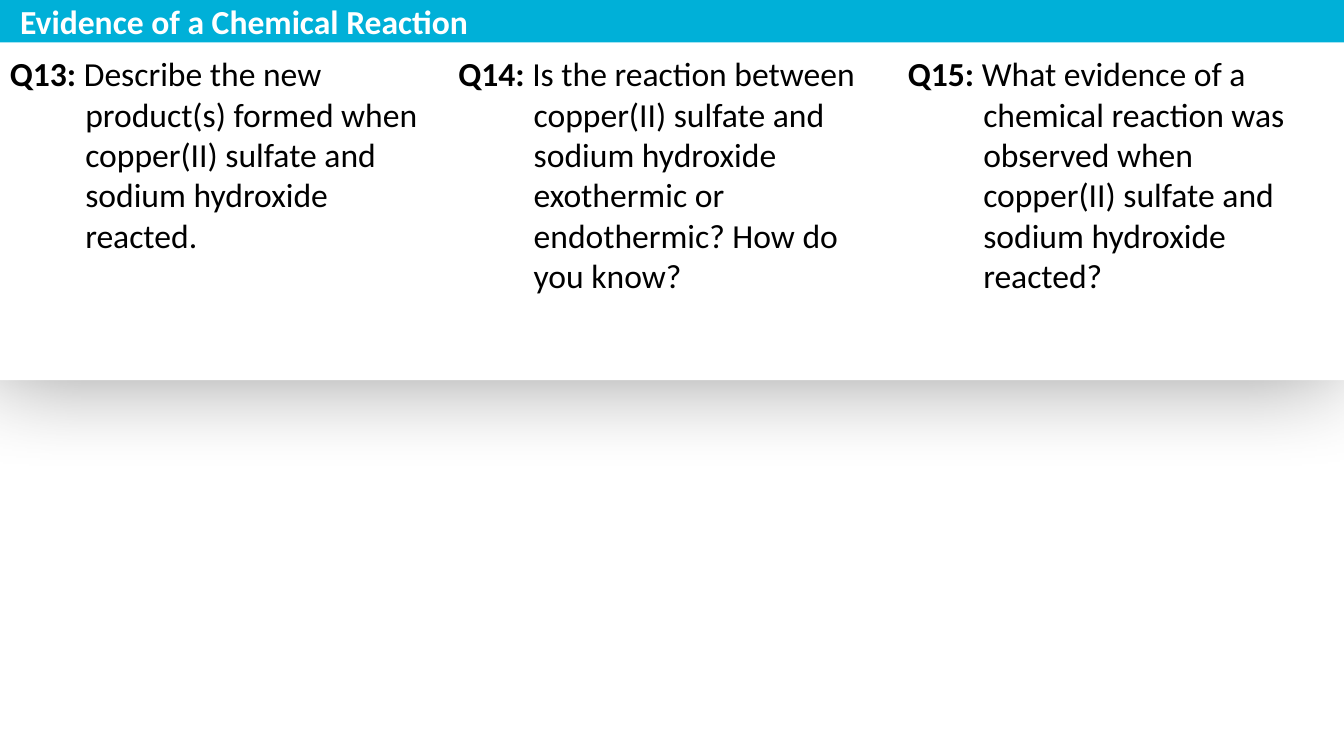
"""Build the slide of questions on evidence of a chemical reaction."""
from lxml.etree import SubElement
from pptx import Presentation
from pptx.dml.color import RGBColor
from pptx.enum.shapes import MSO_SHAPE
from pptx.enum.text import MSO_ANCHOR, MSO_AUTO_SIZE
from pptx.oxml.ns import qn
from pptx.util import Cm, Pt

TITLE = "Evidence of a Chemical Reaction"
QUESTIONS = [
    ("Q13:", " Describe the new product(s) formed when copper(II) sulfate "
             "and sodium hydroxide reacted.", 0, 11.3, 5.38),
    ("Q14:", " Is the reaction between copper(II) sulfate and sodium hydroxide "
             "exothermic or endothermic? How do you know?", 11.3, 11.35, 6.4),
    ("Q15:", " What evidence of a chemical reaction was observed when "
             "copper(II) sulfate and sodium hydroxide reacted?", 22.63, 11.2, 6.4),
]

WHITE = RGBColor(0xFF, 0xFF, 0xFF)
BLACK = RGBColor(0x00, 0x00, 0x00)
CYAN = RGBColor(0x00, 0xB0, 0xD8)

PAGE_WIDTH, PAGE_HEIGHT = Cm(33.87), Cm(18.75)
BANNER_HEIGHT = Cm(1.07)
PANEL_TOP, PANEL_HEIGHT = Cm(0.69), Cm(8.89)
QUESTION_TOP = Cm(1.22)
HANGING = Cm(1.9)


def add_band(page, top, height, color):
    band = page.shapes.add_shape(MSO_SHAPE.RECTANGLE, 0, top, PAGE_WIDTH, height)
    band.shadow.inherit = False
    band.fill.solid()
    band.fill.fore_color.rgb = color
    band.line.fill.background()
    return band


def add_soft_shadow(shape):
    effects = shape._element.spPr.find(qn("a:effectLst"))
    shadow = SubElement(effects, qn("a:outerShdw"), blurRad=str(Pt(68)),
                        dist=str(Pt(5)), dir=str(180 * 60000),
                        algn="ctr", rotWithShape="0")
    color = SubElement(shadow, qn("a:srgbClr"), val=str(BLACK))
    SubElement(color, qn("a:alpha"), val="40000")


def add_text(page, left, top, width, height, spans, color):
    box = page.shapes.add_textbox(left, top, width, height)
    frame = box.text_frame
    frame.word_wrap = True
    frame.auto_size = MSO_AUTO_SIZE.SHAPE_TO_FIT_TEXT
    para = frame.paragraphs[0]
    for text, bold in spans:
        span = para.add_run()
        span.text = text
        span.font.name = "Calibri"
        span.font.size = Pt(24)
        span.font.bold = bold
        span.font.color.rgb = color
    return frame


def main():
    deck = Presentation()
    deck.slide_width, deck.slide_height = PAGE_WIDTH, PAGE_HEIGHT
    page = deck.slides.add_slide(deck.slide_layouts[6])

    add_soft_shadow(add_band(page, PANEL_TOP, PANEL_HEIGHT, WHITE))

    for label, question, left, width, height in QUESTIONS:
        frame = add_text(page, Cm(left), QUESTION_TOP, Cm(width), Cm(height),
                         [(label, True), (question, False)], BLACK)
        properties = frame.paragraphs[0]._p.get_or_add_pPr()
        properties.set("marL", str(HANGING))
        properties.set("indent", str(-HANGING))

    add_band(page, 0, BANNER_HEIGHT, CYAN)
    title = add_text(page, 0, 0, PAGE_WIDTH, BANNER_HEIGHT, [(TITLE, True)], WHITE)
    title.vertical_anchor = MSO_ANCHOR.MIDDLE
    title.margin_left = title.margin_right = Cm(0.51)
    title.margin_top = title.margin_bottom = 0

    deck.save("out.pptx")


if __name__ == "__main__":
    main()
